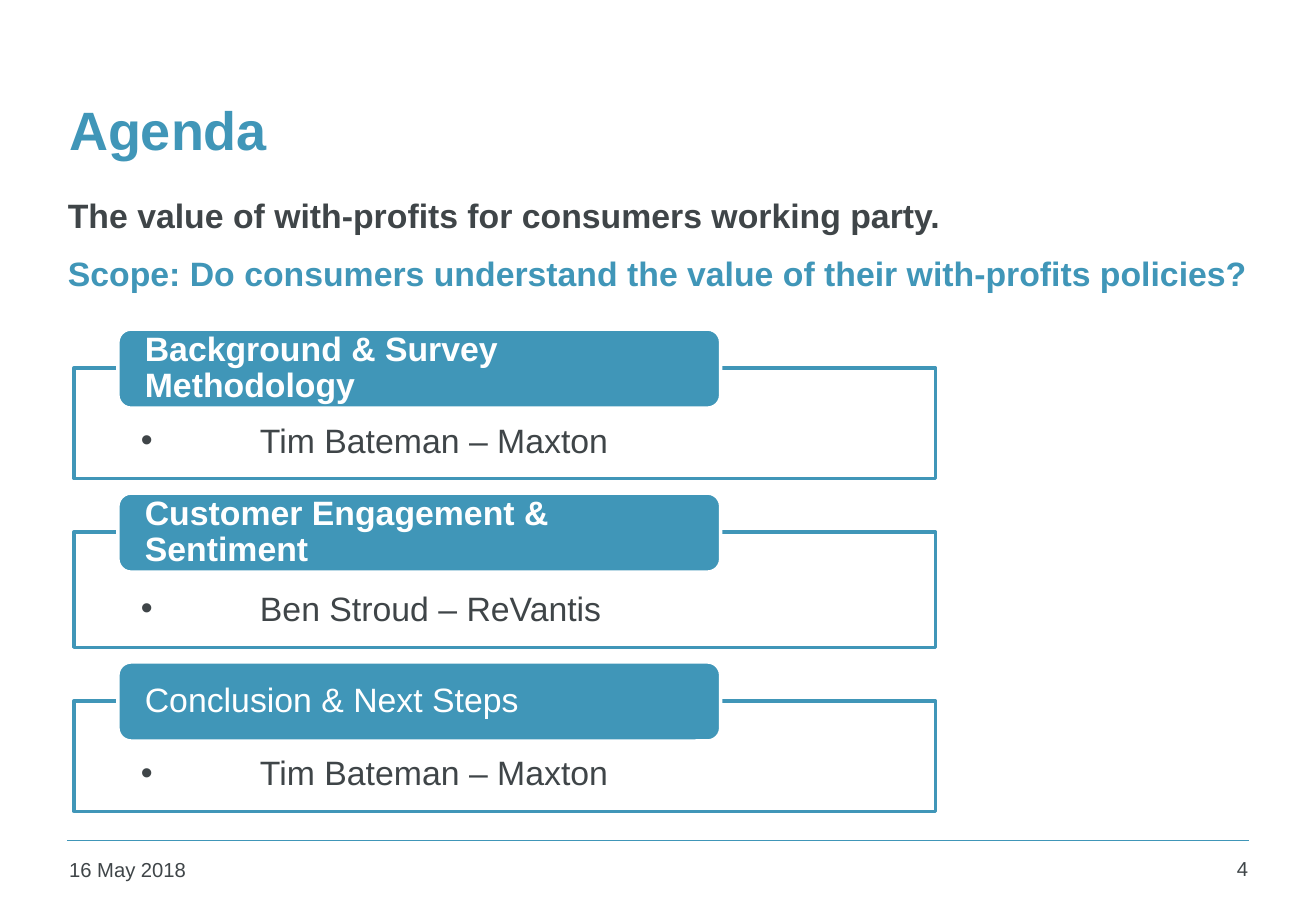
import dataclasses

import lxml.etree
import pptx
import pptx.dml.color
import pptx.enum.shapes
import pptx.enum.text
import pptx.oxml.ns
import pptx.util

SHAPE = pptx.enum.shapes.MSO_SHAPE
ALIGN = pptx.enum.text.PP_ALIGN
ANCHOR = pptx.enum.text.MSO_ANCHOR
qn = pptx.oxml.ns.qn


@dataclasses.dataclass(frozen=True)
class Theme:
    font: str = "Arial"
    accent: str = "4096B8"
    ink: str = "3F4548"
    paper: str = "FFFFFF"
    title: int = 32
    body: int = 20
    footer: int = 12
    border: int = 2
    rule: int = 1


class Deck:
    """Draws themed elements on one slide, with positions in percent of its size."""

    def __init__(self, theme, width, height):
        self.theme = theme
        self.prs = pptx.Presentation()
        self.prs.slide_width = pptx.util.Inches(width)
        self.prs.slide_height = pptx.util.Inches(height)
        self.s = self.prs.slides.add_slide(self.prs.slide_layouts[6])

    def x(self, share):
        return round(self.prs.slide_width * share / 100)

    def y(self, share):
        return round(self.prs.slide_height * share / 100)

    def box(self, x, y, w, h):
        return self.x(x), self.y(y), self.x(w), self.y(h)

    def rgb(self, color):
        return pptx.dml.color.RGBColor.from_string(color)

    def frame(self, sp, anchor=ANCHOR.TOP, insets=(0.1, 0.05, 0.1, 0.05)):
        tf = sp.text_frame
        tf.word_wrap = True
        tf.vertical_anchor = anchor
        tf.margin_left, tf.margin_top, tf.margin_right, tf.margin_bottom = map(
            pptx.util.Inches, insets)
        return tf

    def run(self, p, text, size, color, bold=False, align=ALIGN.LEFT):
        p.alignment = align
        r = p.add_run()
        r.text = text
        r.font.name = self.theme.font
        r.font.size = pptx.util.Pt(size)
        r.font.bold = bold
        r.font.color.rgb = self.rgb(color)

    def text(self, box, lines, size, anchor=ANCHOR.TOP, bold=False, align=ALIGN.LEFT):
        tf = self.frame(self.s.shapes.add_textbox(*self.box(*box)), anchor)
        for i, (text, color) in enumerate(lines):
            p = tf.add_paragraph() if i else tf.paragraphs[0]
            if i:
                p.space_before = pptx.util.Pt(size * 0.54)
            self.run(p, text, size, color, bold, align)

    def shape(self, kind, box, fill, line):
        sp = self.s.shapes.add_shape(kind, *self.box(*box))
        sp.shadow.inherit = False
        sp.fill.solid()
        sp.fill.fore_color.rgb = self.rgb(fill)
        sp.line.color.rgb = self.rgb(line)
        sp.line.width = pptx.util.Pt(self.theme.border)
        return sp

    def panel(self, box, speaker, spacing):
        t = self.theme
        sp = self.shape(SHAPE.RECTANGLE, box, t.paper, t.accent)
        color = sp._element.spPr.find(qn("a:solidFill"))[0]
        lxml.etree.SubElement(color, qn("a:alpha"), val="90000")
        p = self.frame(sp, insets=(0.55, 0.46, 0.55, 0.16)).paragraphs[0]
        p.line_spacing = spacing
        self.run(p, speaker, t.body, t.ink)
        pPr = p._p.get_or_add_pPr()
        indent = pptx.util.Inches(0.98)
        pPr.set("marL", str(indent))
        pPr.set("indent", str(-indent))
        lxml.etree.SubElement(pPr, qn("a:buFont"), typeface=t.font)
        lxml.etree.SubElement(pPr, qn("a:buChar"), char="•")

    def header(self, box, topic, bold):
        t = self.theme
        sp = self.shape(SHAPE.ROUNDED_RECTANGLE, box, t.accent, t.paper)
        p = self.frame(sp, ANCHOR.MIDDLE, (0.19, 0, 0.19, 0)).paragraphs[0]
        p.line_spacing = 0.9
        self.run(p, topic, t.body, t.paper, bold)

    def rule(self, x1, x2, y):
        c = self.s.shapes.add_connector(
            pptx.enum.shapes.MSO_CONNECTOR.STRAIGHT,
            self.x(x1), self.y(y), self.x(x2), self.y(y))
        c.line.color.rgb = self.rgb(self.theme.accent)
        c.line.width = pptx.util.Pt(self.theme.rule)
        lxml.etree.SubElement(c._element.spPr, qn("a:effectLst"))


AGENDA = [
    ("Background & Survey Methodology", True, "Tim Bateman – Maxton", 12.13, 0.9),
    ("Customer Engagement & Sentiment", True, "Ben Stroud – ReVantis", 12.67, 1.0),
    ("Conclusion & Next Steps", False, "Tim Bateman – Maxton", 12.13, 0.9),
]


def main():
    t = Theme()
    deck = Deck(t, 10.83, 7.5)
    deck.rule(5.08, 94.92, 92.27)
    deck.text((4.34, 5.87, 90.67, 16.67), [("Agenda", t.accent)],
              t.title, ANCHOR.MIDDLE, bold=True)
    deck.text((4.34, 93.47, 22.07, 4.8), [("16 May 2018", t.ink)], t.footer)
    deck.text((88.64, 93.33, 7.11, 4.93), [("4", t.ink)], t.footer, align=ALIGN.RIGHT)
    deck.text((4.25, 20.67, 92.34, 12.53), [
        ("The value of with-profits for consumers working party.", t.ink),
        ("Scope: Do consumers understand the value of their with-profits policies?",
         t.accent),
    ], t.body, bold=True)

    top, overlap, gap = 36.13, 4.27, 1.6
    for topic, bold, speaker, height, spacing in AGENDA:
        deck.panel((5.63, top + overlap, 65.47, height), speaker, spacing)
        deck.header((8.96, top, 45.8, 8.67), topic, bold)
        top += overlap + height + gap

    deck.prs.save("out.pptx")


if __name__ == "__main__":
    main()
